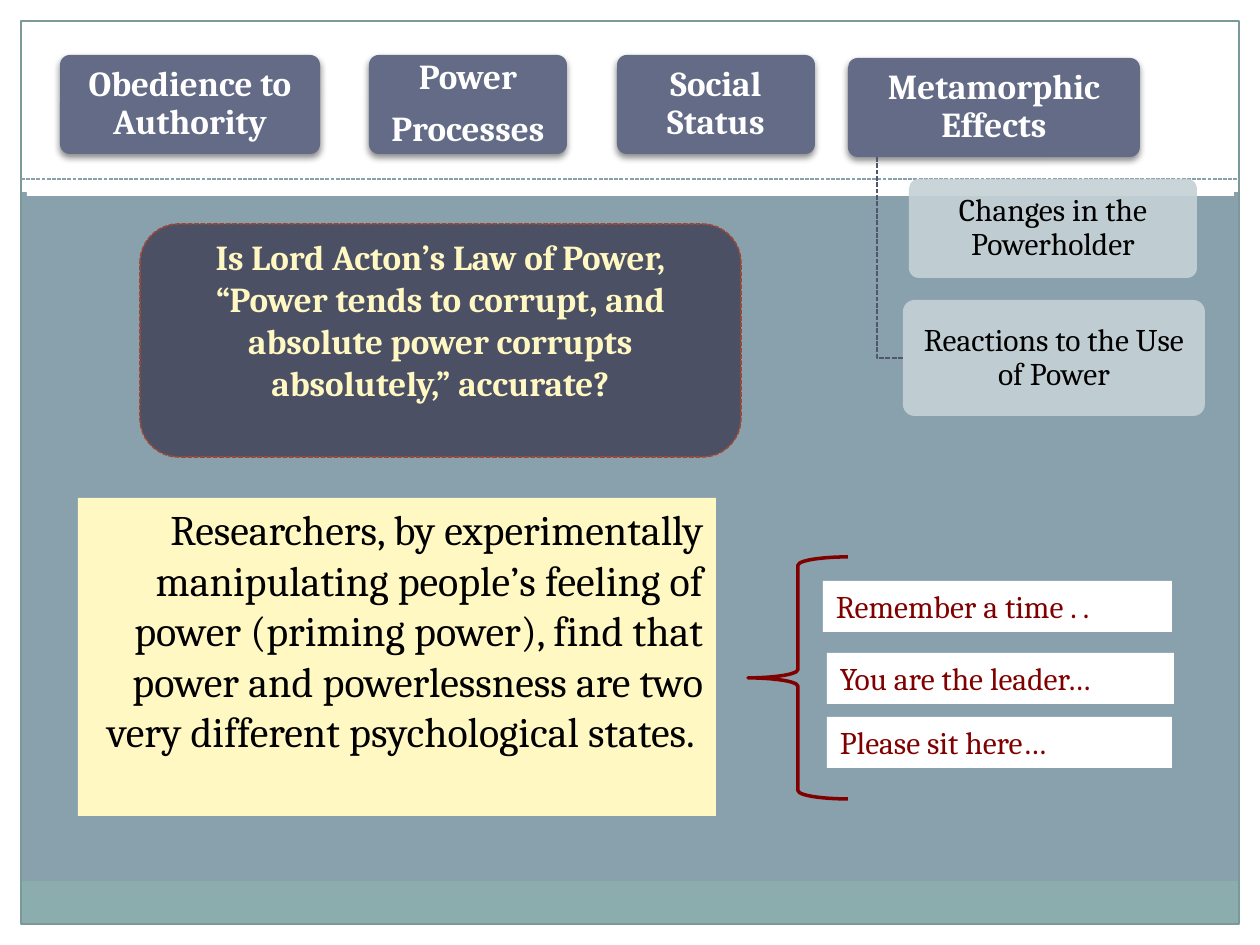
from lxml import etree
from pptx import Presentation
from pptx import util as u
from pptx.dml.color import RGBColor
from pptx.enum import dml, shapes, text
from pptx.oxml import parse_xml
from pptx.oxml.ns import nsdecls, qn

PX = 914400 // 126
W, H = 1260, 945
FONT = "Cambria"
RECT = shapes.MSO_SHAPE.RECTANGLE
ROUND = shapes.MSO_SHAPE.ROUNDED_RECTANGLE
BRACE = shapes.MSO_SHAPE.LEFT_BRACE
LEFT, CENTER, RIGHT = (text.PP_ALIGN.LEFT, text.PP_ALIGN.CENTER,
                       text.PP_ALIGN.RIGHT)
TOP, MIDDLE = text.MSO_ANCHOR.TOP, text.MSO_ANCHOR.MIDDLE

# Boxes are left, top, width, height in px
BACKGROUND, WHITE, MAROON, CREAM = "88A1AD", "FFFFFF", "800000", "FFF8C2"
EDGE = 21
BANDS = [
    ((0, 0, W, 192), WHITE),
    ((0, H - EDGE, W, EDGE), WHITE),
    ((W - EDGE, 0, EDGE, H), WHITE),
    ((0, 0, EDGE, H), WHITE),
    ((EDGE, 881, W - 2 * EDGE, 43), "8CADAE"),
]
FRAME = (EDGE, EDGE, W - 2 * EDGE, H - 2 * EDGE)
HEADER_FOOT = (27, 129, 1207, 67)
DIVIDER_Y = 179

TOPICS = [
    ((60, 55, 260, 99), ["Obedience to Authority"]),
    ((369, 55, 198, 99), ["Power", "Processes"]),
    ((617, 55, 198, 99), ["Social Status"]),
    ((848, 58, 292, 99), ["Metamorphic Effects"]),
]
SUBTOPICS = [
    ((909, 179, 288, 99), ["Changes in the Powerholder"]),
    ((903, 300, 302, 116), ["Reactions to the Use of Power"]),
]
BRANCH = [(877, 157), (877, 358), (903, 358)]
FINDING = ((78, 498, 638, 318), [
    "Researchers, by experimentally manipulating people’s feeling of power "
    "(priming power), find that power and powerlessness are two very "
    "different psychological states. "])
PRIMES = [
    ((823, 581, 349, 51), ["Remember a time . ."]),
    ((827, 653, 347, 51), ["You are the leader…"]),
    ((827, 717, 345, 51), ["Please sit here…"]),
]
BRACE_BOX = (748, 557, 100, 242)
QUESTION = ((140, 224, 601, 233), [
    "Is Lord Acton’s Law of Power, “Power tends to corrupt, and absolute "
    "power corrupts absolutely,” accurate?"])

CARD = dict(align=CENTER, anchor=MIDDLE, spacing=0.9, insets=(8, 6, 8, 6))
TOPIC_TEXT = dict(CARD, size=20, color=WHITE, bold=True)
SUBTOPIC_TEXT = dict(CARD, size=18, color="000000")
FINDING_TEXT = dict(size=24, color="000000", align=RIGHT)
PRIME_TEXT = dict(size=18, color=MAROON)
QUESTION_TEXT = dict(size=20, color=CREAM, bold=True, align=CENTER,
                     anchor=MIDDLE, insets=(13, 6, 13, 48))


def px(*values):
    return [u.Emu(v * PX) for v in values]


def rgb(value):
    return RGBColor.from_string(value)


def set_line(line, color, width, dashed=False):
    line.color.rgb = rgb(color)
    line.width = u.Pt(width)
    if dashed:
        line.dash_style = dml.MSO_LINE.SQUARE_DOT


def add_shape(slide, kind, box, fill=None, line=None):
    sp = slide.shapes.add_shape(kind, *px(*box))
    sp.shadow.inherit = False
    if fill:
        sp.fill.solid()
        sp.fill.fore_color.rgb = rgb(fill)
    else:
        sp.fill.background()
    if line:
        set_line(sp.line, *line)
    else:
        sp.line.fill.background()
    return sp


def write(sp, paragraphs, size, color, bold=False, align=LEFT, anchor=TOP,
          spacing=1.0, insets=(13, 6, 13, 6)):
    tf = sp.text_frame
    left, top, right, bottom = px(*insets)
    frame = dict(word_wrap=True, vertical_anchor=anchor, margin_left=left,
                 margin_top=top, margin_right=right, margin_bottom=bottom)
    for name, value in frame.items():
        setattr(tf, name, value)
    tf.text = "\n".join(paragraphs)
    for i, p in enumerate(tf.paragraphs):
        p.alignment, p.line_spacing = align, spacing
        p.space_before = u.Pt(8 if i else 0)
        font = p.runs[0].font
        for name, value in dict(name=FONT, size=u.Pt(size), bold=bold).items():
            setattr(font, name, value)
        font.color.rgb = rgb(color)


def add_card(slide, box, paragraphs, fill, style):
    sp = add_shape(slide, ROUND, box, fill)
    sp.adjustments[0] = 0.1
    write(sp, paragraphs, **style)
    return sp


def drop_shadow(sp):
    props = sp._element.spPr
    props.remove(props.find(qn("a:effectLst")))
    props.append(parse_xml(
        f'<a:effectLst {nsdecls("a")}><a:outerShdw blurRad="50800" '
        'dist="25400" dir="5400000" rotWithShape="0"><a:srgbClr val="000000">'
        '<a:alpha val="45000"/></a:srgbClr></a:outerShdw></a:effectLst>'))


def set_opacity(sp, percent):
    color = sp._element.spPr.find(qn("a:solidFill"))[0]
    etree.SubElement(color, qn("a:alpha"), val=str(percent * 1000))


def add_backdrop(slide):
    slide.background.fill.solid()
    slide.background.fill.fore_color.rgb = rgb(BACKGROUND)
    for box, fill in BANDS:
        add_shape(slide, RECT, box, fill)
    add_shape(slide, RECT, FRAME, line=("7C999A", 0.75))
    add_shape(slide, RECT, HEADER_FOOT, WHITE)
    divider = slide.shapes.add_connector(
        shapes.MSO_CONNECTOR.STRAIGHT,
        *px(EDGE, DIVIDER_Y, W - EDGE, DIVIDER_Y))
    set_line(divider.line, BACKGROUND, 0.75, True)
    etree.SubElement(divider._element.spPr, qn("a:effectLst"))


def add_branch(slide):
    builder = slide.shapes.build_freeform(*BRANCH[0], scale=PX)
    builder.add_line_segments(BRANCH[1:], close=False)
    sp = builder.convert_to_shape()
    sp.shadow.inherit = False
    sp.fill.background()
    set_line(sp.line, "50566B", 0.9, True)


def main():
    prs = Presentation()
    prs.slide_width, prs.slide_height = px(W, H)
    slide = prs.slides.add_slide(prs.slide_layouts[6])
    add_backdrop(slide)
    for box, words in TOPICS:
        drop_shadow(add_card(slide, box, words, "646B86", TOPIC_TEXT))
    add_branch(slide)
    for box, words in SUBTOPICS:
        set_opacity(add_card(slide, box, words, "C5D1D7", SUBTOPIC_TEXT), 90)

    box, words = FINDING
    write(add_shape(slide, RECT, box, CREAM), words, **FINDING_TEXT)
    for box, words in PRIMES:
        write(add_shape(slide, RECT, box, WHITE), words, **PRIME_TEXT)
    add_shape(slide, BRACE, BRACE_BOX, line=(MAROON, 2))
    box, words = QUESTION
    sp = add_shape(slide, ROUND, box, "4B5064", ("9B4936", 0.9, True))
    write(sp, words, **QUESTION_TEXT)
    prs.save("out.pptx")


if __name__ == "__main__":
    main()
